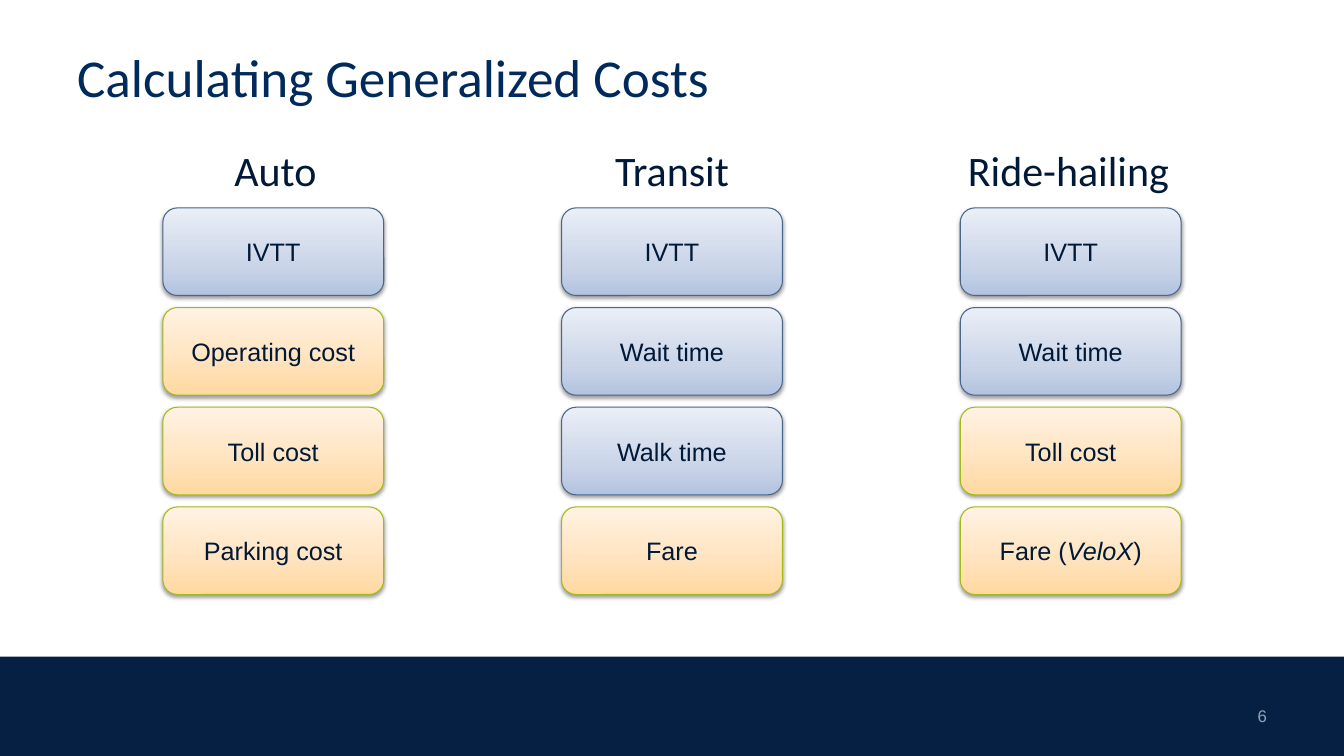
from dataclasses import dataclass

from pptx import Presentation
from pptx.dml.color import RGBColor as RGB
from pptx.enum.shapes import MSO_SHAPE as SHAPE
from pptx.enum.text import MSO_ANCHOR as ANCHOR, PP_ALIGN as ALIGN
from pptx.oxml import parse_xml
from pptx.oxml.ns import nsdecls
from pptx.util import Pt


@dataclass(frozen=True)
class Theme:
    heading_font: str = "Calibri"
    body_font: str = "Arial"
    title_size: float = 38
    mode_size: float = 30
    card_size: float = 18
    number_size: float = 12
    title: str = "002A5C"
    text: str = "001937"
    number: str = "96A1B3"
    footer: str = "052043"
    time_line: str = "49678B"
    time_stops: tuple = ((0, "B3C3DF"), (35, "CAD5E8"), (100, "EAEFF7"))
    money_line: str = "A1BC15"
    money_stops: tuple = ((0, "FFD8A0"), (50, "FFE6C5"), (100, "FFF2E3"))


T = Theme()
TIME = (T.time_stops, T.time_line)
MONEY = (T.money_stops, T.money_line)

MODES = [
    ("Auto", [(["IVTT"], TIME), (["Operating cost"], MONEY),
              (["Toll cost"], MONEY), (["Parking cost"], MONEY)]),
    ("Transit", [(["IVTT"], TIME), (["Wait time"], TIME),
                 (["Walk time"], TIME), (["Fare"], MONEY)]),
    ("Ride-hailing", [(["IVTT"], TIME), (["Wait time"], TIME),
                      (["Toll cost"], MONEY), (["Fare (", "VeloX", ")"], MONEY)]),
]


def style(font, name, size, color):
    font.name = name
    font.size = Pt(size)
    font.color.rgb = RGB.from_string(color)


def add_text(s, box, text, name, size, color, align=ALIGN.LEFT, anchor=ANCHOR.MIDDLE):
    tf = s.shapes.add_textbox(*map(Pt, box)).text_frame
    tf.word_wrap = True
    tf.vertical_anchor = anchor
    tf.text = text
    p = tf.paragraphs[0]
    p.alignment = align
    style(p.runs[0].font, name, size, color)


def add_gradient(sp, stops):
    gs = "".join(f'<a:gs pos="{pos * 1000}"><a:srgbClr val="{color}"/></a:gs>'
                 for pos, color in stops)
    sp._element.spPr.append(parse_xml(
        f'<a:gradFill {nsdecls("a")} rotWithShape="1"><a:gsLst>{gs}</a:gsLst>'
        '<a:lin ang="16200000" scaled="0"/></a:gradFill>'))


def add_shadow(sp):
    sp._element.spPr.append(parse_xml(
        f'<a:effectLst {nsdecls("a")}><a:outerShdw blurRad="{Pt(3.1)}" '
        f'dist="{Pt(1.6)}" dir="5400000" rotWithShape="0"><a:srgbClr val="000000">'
        '<a:alpha val="38000"/></a:srgbClr></a:outerShdw></a:effectLst>'))


def add_card(s, box, parts, kind):
    stops, line = kind
    sp = s.shapes.add_shape(SHAPE.ROUNDED_RECTANGLE, *map(Pt, box))
    add_gradient(sp, stops)
    sp.line.color.rgb = RGB.from_string(line)
    sp.line.width = Pt(0.75)
    add_shadow(sp)
    tf = sp.text_frame
    tf.word_wrap = True
    tf.vertical_anchor = ANCHOR.MIDDLE
    p = tf.paragraphs[0]
    p.alignment = ALIGN.CENTER
    for i, part in enumerate(parts):
        r = p.add_run()
        r.text = part
        style(r.font, T.body_font, T.card_size, T.text)
        r.font.italic = i == 1


def add_modes(s, box):
    x, y, w, h = box
    inset, heading_h, card_w, card_h = 7.2, 48.5, 157.8, 62.6
    col_w = (w - 2 * inset) / len(MODES)
    card_pitch, row_pitch = 284.8, 71.2
    first_card = x + w / 2 - card_pitch - card_w / 2
    for col, (mode, cards) in enumerate(MODES):
        heading = (x + inset + col * col_w, y, col_w, heading_h)
        add_text(s, heading, mode, T.heading_font, T.mode_size, T.text,
                 ALIGN.CENTER, ANCHOR.TOP)
        for row, (parts, kind) in enumerate(cards):
            card = (first_card + col * card_pitch,
                    y + heading_h + row * row_pitch, card_w, card_h)
            add_card(s, card, parts, kind)


def add_footer(s, box, number):
    x, y, w, h = box
    sp = s.shapes.add_shape(SHAPE.RECTANGLE, *map(Pt, box))
    sp.shadow.inherit = False
    sp.fill.solid()
    sp.fill.fore_color.rgb = RGB.from_string(T.footer)
    sp.line.fill.background()
    add_text(s, (x + w - 121, y + 28, 73, 28.8), number, T.body_font,
             T.number_size, T.number, ALIGN.RIGHT)


def main():
    prs = Presentation()
    prs.slide_width, prs.slide_height = Pt(960), Pt(540)
    s = prs.slides.add_slide(prs.slide_layouts[6])
    add_footer(s, (0, 469, 960, 71), "6")
    add_text(s, (48, 22.3, 864, 64), "Calculating Generalized Costs",
             T.heading_font, T.title_size, T.title)
    add_modes(s, (48, 100, 864, 369))
    prs.save("out.pptx")


if __name__ == "__main__":
    main()
